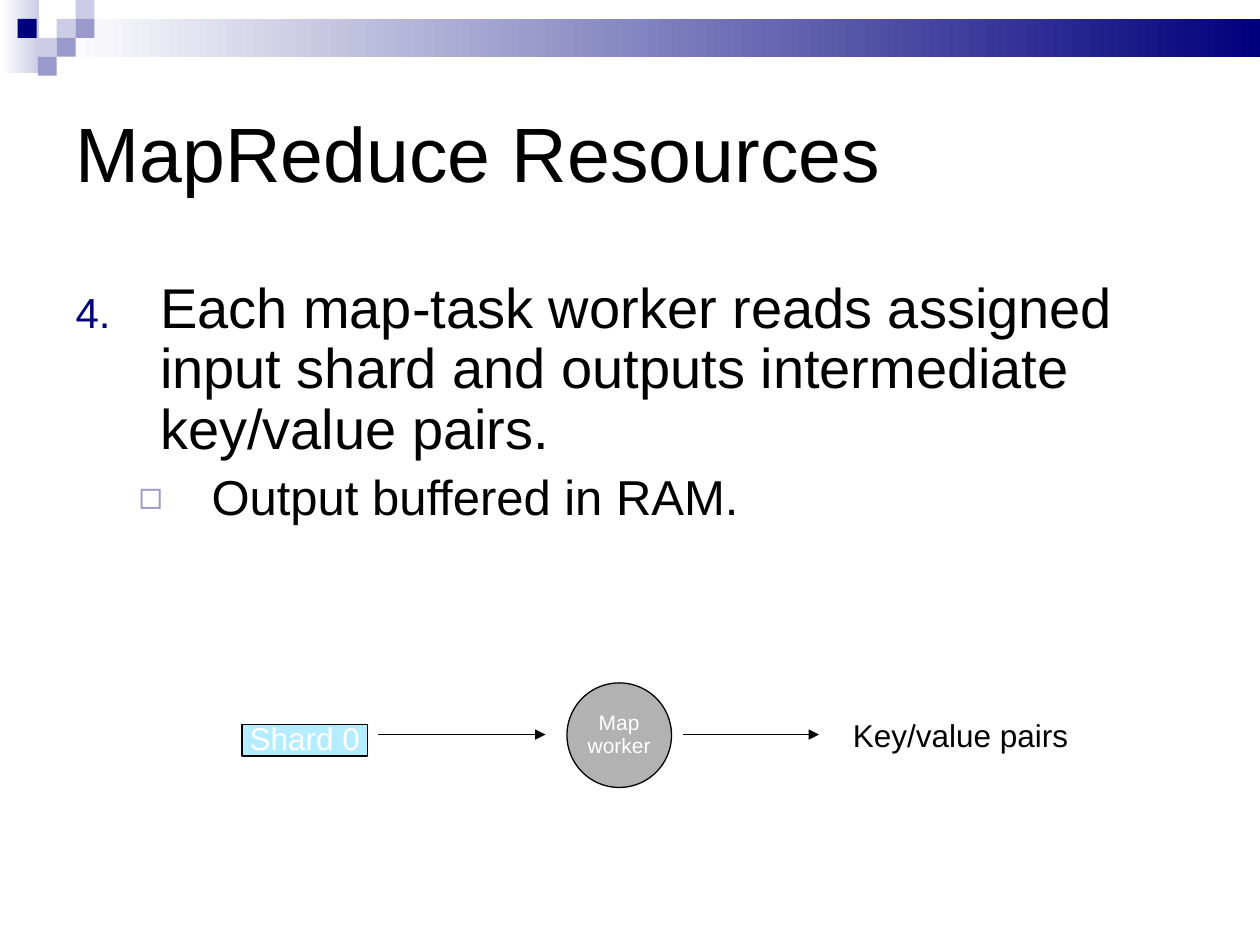
from dataclasses import dataclass
from typing import Optional

from lxml.etree import SubElement
from pptx import Presentation
from pptx.dml.color import RGBColor
from pptx.enum.shapes import MSO_CONNECTOR as Connector, MSO_SHAPE as Preset
from pptx.enum.text import MSO_ANCHOR as Anchor, MSO_AUTO_SIZE as AutoSize, PP_ALIGN as Align
from pptx.oxml.ns import qn
from pptx.util import Inches, Pt


@dataclass(frozen=True)
class Theme:
    """Colours, font and type sizes of the slide."""
    font: str = "Arial"
    ink: str = "000000"
    paper: str = "FFFFFF"
    navy: str = "00007D"
    lilac: str = "9999CC"
    pale: str = "CCCCE6"
    worker: str = "B2B2B2"
    shard: str = "B4EDFF"
    title_size: int = 44
    step_size: int = 32
    detail_size: int = 28
    label_size: int = 18
    worker_size: int = 12
    rule: float = 0.75
    spacing: float = 0.9


@dataclass(frozen=True)
class Box:
    """A place on the slide in inches."""
    left: float
    top: float
    width: float
    height: float

    def lengths(self) -> tuple:
        """Return the four values as lengths."""
        return tuple(Inches(v) for v in (self.left, self.top, self.width, self.height))


@dataclass(frozen=True)
class Band:
    """A header band fading leftwards to the paper colour."""
    box: Box
    color: str


@dataclass(frozen=True)
class Tile:
    """A small square of the header mosaic."""
    left: float
    top: float
    color: str


@dataclass(frozen=True)
class Node:
    """A labelled outlined shape of the flow."""
    preset: Preset
    box: Box
    fill: str
    lines: tuple
    size: int


@dataclass(frozen=True)
class Arrow:
    """A horizontal arrow of the flow."""
    start: float
    end: float


@dataclass(frozen=True)
class Item:
    """A list entry with its marker and indents."""
    text: str
    level: int
    size: int
    margin: float
    hanging: float
    before: int
    color: str
    marker_size: int
    marker: tuple


THEME = Theme()
TILE_SIDE = 0.15
FLOW_Y = 5.83
BANDS = (
    Band(Box(0, 0, 0.31, 0.58), THEME.pale),
    Band(Box(0.45, 0.15, 9.55, 0.3), THEME.navy),
)
TILES = (
    Tile(0.45, 0.15, THEME.pale),
    Tile(0.6, 0, THEME.pale),
    Tile(0.6, 0.15, THEME.lilac),
    Tile(0.3, 0.3, THEME.pale),
    Tile(0.14, 0.15, THEME.navy),
    Tile(0.45, 0.3, THEME.lilac),
    Tile(0.3, 0.45, THEME.lilac),
)
ITEMS = (
    Item("Each map-task worker reads assigned input shard and outputs intermediate key/value pairs.",
         0, THEME.step_size, 0.67, -0.67, 8, THEME.navy, 75,
         ("a:buAutoNum", {"type": "arabicPeriod", "startAt": "4"})),
    Item("Output buffered in RAM.", 1, THEME.detail_size, 1.08, -0.58, 7, THEME.lilac, 80,
         ("a:buChar", {"char": "◻"})),
)
NODES = (
    Node(Preset.OVAL, Box(4.5, 5.42, 0.83, 0.83), THEME.worker, ("Map", "worker"), THEME.worker_size),
    Node(Preset.RECTANGLE, Box(1.92, 5.75, 1, 0.25), THEME.shard, ("Shard 0",), THEME.label_size),
)
ARROWS = (Arrow(3, 4.33), Arrow(5.42, 6.5))


def rgb(color: str) -> RGBColor:
    """Turn a hex string into a colour."""
    return RGBColor.from_string(color)


def apply(target, formats: dict) -> None:
    """Set every attribute named in the format values."""
    for name, value in formats.items():
        setattr(target, name, value)


def write(paragraph, text: str, size: int, color: str, align: Align = Align.LEFT, before: int = 0) -> None:
    """Write one formatted run into a paragraph."""
    apply(paragraph, {"alignment": align, "line_spacing": THEME.spacing, "space_before": Pt(before)})
    run = paragraph.add_run()
    run.text = text
    apply(run.font, {"name": THEME.font, "size": Pt(size)})
    run.font.color.rgb = rgb(color)


def place(shape, box: Box) -> None:
    """Move a placeholder to its box."""
    apply(shape, dict(zip(("left", "top", "width", "height"), box.lengths())))


def add_block(slide, preset: Preset, box: Box, fill: Optional[str] = None):
    """Add a shadowless, unlined shape."""
    block = slide.shapes.add_shape(preset, *box.lengths())
    block.shadow.inherit = False
    block.line.fill.background()
    if fill:
        block.fill.solid()
        block.fill.fore_color.rgb = rgb(fill)
    return block


def add_band(slide, band: Band) -> None:
    """Add a gradient header band."""
    fill = add_block(slide, Preset.RECTANGLE, band.box).fill
    fill.gradient()
    fill.gradient_angle = 180
    for stop, color, position in zip(fill.gradient_stops, (band.color, THEME.paper), (0, 1)):
        stop.color.rgb = rgb(color)
        stop.position = position


def add_node(slide, node: Node) -> None:
    """Add a flow shape with its centred label."""
    block = add_block(slide, node.preset, node.box, node.fill)
    block.line.color.rgb = rgb(THEME.ink)
    block.line.width = Pt(THEME.rule)
    frame = block.text_frame
    apply(frame, {"word_wrap": False, "vertical_anchor": Anchor.MIDDLE})
    for index, line in enumerate(node.lines):
        paragraph = frame.add_paragraph() if index else frame.paragraphs[0]
        write(paragraph, line, node.size, THEME.paper, Align.CENTER)


def add_arrow(slide, arrow: Arrow) -> None:
    """Add a flow arrow with a triangular head."""
    y = Inches(FLOW_Y)
    link = slide.shapes.add_connector(Connector.STRAIGHT, Inches(arrow.start), y, Inches(arrow.end), y)
    link.line.color.rgb = rgb(THEME.ink)
    link.line.width = Pt(THEME.rule)
    SubElement(link.line._get_or_add_ln(), qn("a:tailEnd"), type="triangle")
    SubElement(link._element.spPr, qn("a:effectLst"))


def add_item(paragraph, item: Item) -> None:
    """Write a list entry with its coloured marker."""
    paragraph.level = item.level
    write(paragraph, item.text, item.size, THEME.ink, before=item.before)
    props = paragraph._p.get_or_add_pPr()
    props.set("marL", str(Inches(item.margin)))
    props.set("indent", str(Inches(item.hanging)))
    SubElement(SubElement(props, qn("a:buClr")), qn("a:srgbClr"), val=item.color)
    SubElement(props, qn("a:buSzPct"), val=str(item.marker_size * 1000))
    tag, values = item.marker
    SubElement(props, qn(tag), values)


def main() -> None:
    """Build and save the slide."""
    deck = Presentation()
    apply(deck, {"slide_width": Inches(10), "slide_height": Inches(7.5)})
    slide = deck.slides.add_slide(deck.slide_layouts[1])
    for band in BANDS:
        add_band(slide, band)
    for tile in TILES:
        add_block(slide, Preset.RECTANGLE, Box(tile.left, tile.top, TILE_SIDE, TILE_SIDE), tile.color)

    title, body = slide.shapes.title, slide.placeholders[1]
    place(title, Box(0.5, 0.5, 9, 1.5))
    apply(title.text_frame, {"vertical_anchor": Anchor.MIDDLE, "auto_size": AutoSize.NONE})
    write(title.text_frame.paragraphs[0], "MapReduce Resources", THEME.title_size, THEME.ink)
    place(body, Box(0.5, 2.17, 9, 4.25))
    apply(body.text_frame, {"vertical_anchor": Anchor.TOP, "auto_size": AutoSize.NONE})
    for index, item in enumerate(ITEMS):
        add_item(body.text_frame.add_paragraph() if index else body.text_frame.paragraphs[0], item)

    for node in NODES:
        add_node(slide, node)
    for arrow in ARROWS:
        add_arrow(slide, arrow)
    result = slide.shapes.add_textbox(*Box(6.67, 5.67, 1.91, 0.36).lengths()).text_frame
    apply(result, {"word_wrap": False, "auto_size": AutoSize.SHAPE_TO_FIT_TEXT})
    write(result.paragraphs[0], "Key/value pairs", THEME.label_size, THEME.ink)
    deck.save("out.pptx")


if __name__ == "__main__":
    main()
